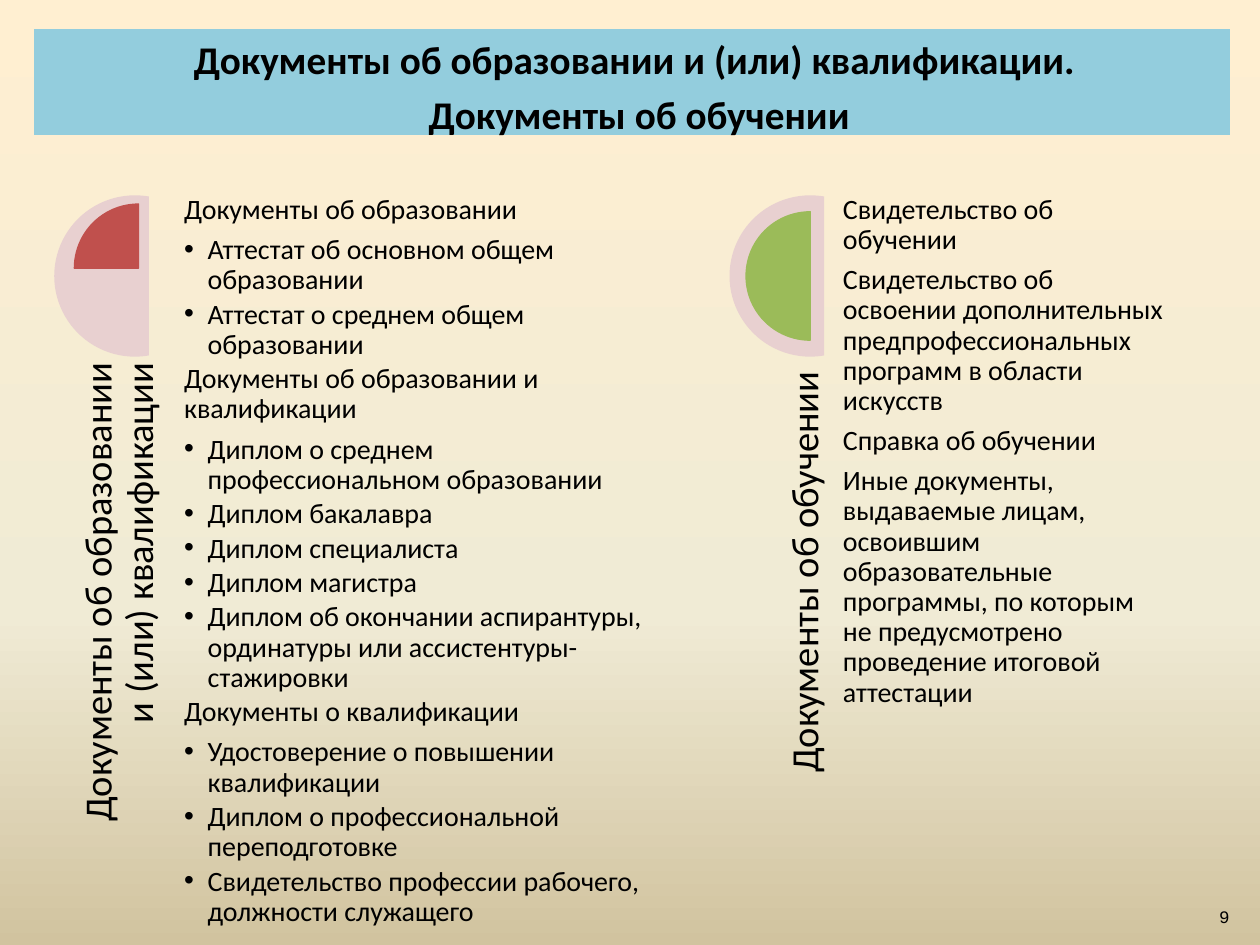
from copy import deepcopy

from lxml.etree import SubElement as Sub
from pptx import Presentation as Deck
from pptx.dml.color import RGBColor as RGB
from pptx.enum.shapes import MSO_SHAPE as Kind
from pptx.enum.text import MSO_ANCHOR as Anchor, MSO_AUTO_SIZE as Fit, PP_ALIGN as Align
from pptx.oxml.ns import qn
from pptx.util import Pt

BLACK = RGB(0x00, 0x00, 0x00)
SKY = RGB(0x93, 0xCD, 0xDD)
ROSE = RGB(0xE8, 0xD0, 0xD0)
RED = RGB(0xC0, 0x50, 0x4D)
GREEN = RGB(0x9B, 0xBB, 0x59)
STOPS = [(0, RGB(0xFF, 0xEF, 0xD1)), (0.65, RGB(0xF0, 0xEB, 0xD5)),
         (1, RGB(0xD1, 0xC3, 0x9F))]

TIGHT = dict(margin_left=0, margin_top=0, margin_right=0, margin_bottom=0)
HEAD = dict(alignment=Align.LEFT, line_spacing=0.9, space_before=Pt(0), space_after=Pt(5.6))
ITEM = dict(HEAD, level=1, space_after=Pt(2.4))
SIDE = dict(HEAD, alignment=Align.RIGHT, space_after=Pt(7.7))
TITLE = dict(alignment=Align.CENTER, space_before=Pt(4.5))

LEFT = dict(
    color=RED, arc=(108, 162), pie=(11.5, 5), side=(-100, 201.6), body=(74.2, 266.4),
    label="Документы об образовании и (или) квалификации",
    groups=[
        ("Документы об образовании", [
            "Аттестат об основном общем образовании",
            "Аттестат о среднем общем образовании"]),
        ("Документы об образовании и квалификации", [
            "Диплом о среднем профессиональном образовании",
            "Диплом бакалавра",
            "Диплом специалиста",
            "Диплом магистра",
            "Диплом об окончании аспирантуры, ординатуры или ассистентуры-стажировки"]),
        ("Документы о квалификации", [
            "Удостоверение о повышении квалификации",
            "Диплом о профессиональной переподготовке",
            "Свидетельство профессии рабочего, должности служащего"])])
RIGHT = dict(
    color=GREEN, arc=(54, 162), pie=(9.4, 9.4), side=(-105.8, 206.6), body=(64.8, 184.3),
    label="Документы об обучении",
    groups=[
        ("Свидетельство об обучении", []),
        ("Свидетельство об освоении дополнительных предпрофессиональных "
         "программ в области искусств", []),
        ("Справка об обучении", []),
        ("Иные документы, выдаваемые лицам, освоившим образовательные программы, "
         "по которым не предусмотрено проведение итоговой аттестации", [])])


def apply(obj, form):
    for key, val in form.items():
        setattr(obj, key, val)


def place(shape, x, y, w, h):
    apply(shape, dict(left=Pt(x), top=Pt(y), width=Pt(w), height=Pt(h)))


def write(shape, lines, size, frame, bold=False, font="Calibri"):
    text = shape.text_frame
    apply(text, dict(word_wrap=True, auto_size=Fit.NONE, **frame))
    for num, (words, form, margin, indent, mark) in enumerate(lines):
        par = text.add_paragraph() if num else text.paragraphs[0]
        apply(par, form)
        run = par.add_run()
        run.text = words
        apply(run.font, dict(name=font, size=Pt(size), bold=bold))
        run.font.color.rgb = BLACK
        props = par._p.get_or_add_pPr()
        props.set("marL", str(Pt(margin)))
        props.set("indent", str(Pt(indent)))
        if mark:
            Sub(props, qn("a:buChar")).set("char", mark)
        else:
            Sub(props, qn("a:buNone"))


def sector(slide, kind, box, arc, color, edge=False):
    shape = slide.shapes.add_shape(kind, *map(Pt, box))
    shape.shadow.inherit = False
    for num, val in enumerate(arc):
        shape.adjustments[num] = val
    shape.fill.solid()
    shape.fill.fore_color.rgb = color
    if edge:
        shape.line.color.rgb = color
        shape.line.width = Pt(0.75)
    else:
        shape.line.fill.background()


def backdrop(slide):
    fill = slide.background.fill
    fill.gradient()
    fill.gradient_angle = 270
    stops = slide._element.find(".//" + qn("a:gsLst"))
    stops.append(deepcopy(stops[0]))
    for stop, (pos, color) in zip(fill.gradient_stops, STOPS):
        stop.position = pos
        stop.color.rgb = color


def banner(slide, box):
    title = slide.shapes.title
    place(title, *box)
    title.fill.solid()
    title.fill.fore_color.rgb = SKY
    lines = ["Документы об образовании и (или) квалификации. ", "Документы об обучении"]
    write(title, [(line, TITLE, 28.8, -20.2, "") for line in lines], 22.4,
          dict(vertical_anchor=Anchor.TOP), bold=True)


def column(slide, holder, x, y, part):
    sector(slide, Kind.CHORD, (x, y, 92.2, 92.2), (48, 168), ROSE)
    dx, dy = part["pie"]
    sector(slide, Kind.PIE, (x + dx, y + dy, 73.4, 73.4), part["arc"], part["color"], True)

    dx, dy = part["side"]
    label = slide.shapes.add_textbox(Pt(x + dx), Pt(y + dy), Pt(267.1), Pt(55.4))
    label.rotation = 270
    write(label, [(part["label"], SIDE, 0, 0, "")], 22,
          dict(TIGHT, vertical_anchor=Anchor.BOTTOM))

    dx, wide = part["body"]
    place(holder, x + dx, y, wide, 368)
    lines = []
    for head, items in part["groups"]:
        lines.append((head, HEAD, 0, 0, ""))
        lines += [(item, ITEM, 13.5, -13.5, "•") for item in items]
    write(holder, lines, 16, dict(TIGHT, vertical_anchor=Anchor.TOP))


def folio(slide, box):
    shape = slide.shapes.add_textbox(*map(Pt, box))
    write(shape, [("9", dict(alignment=Align.RIGHT), 0, 0, "")], 10,
          dict(vertical_anchor=Anchor.BOTTOM), font="Courier New")


def main():
    deck = Deck()
    apply(deck, dict(slide_width=Pt(720), slide_height=Pt(540)))
    slide = deck.slides.add_slide(deck.slide_layouts[3])
    backdrop(slide)
    folio(slide, (681, 504.7, 28.8, 28.8))
    banner(slide, (19.5, 16.6, 683.3, 60.5))
    column(slide, slide.placeholders[1], 31, 111.6, LEFT)
    column(slide, slide.placeholders[2], 416.9, 111.6, RIGHT)
    deck.save("out.pptx")


if __name__ == "__main__":
    main()
